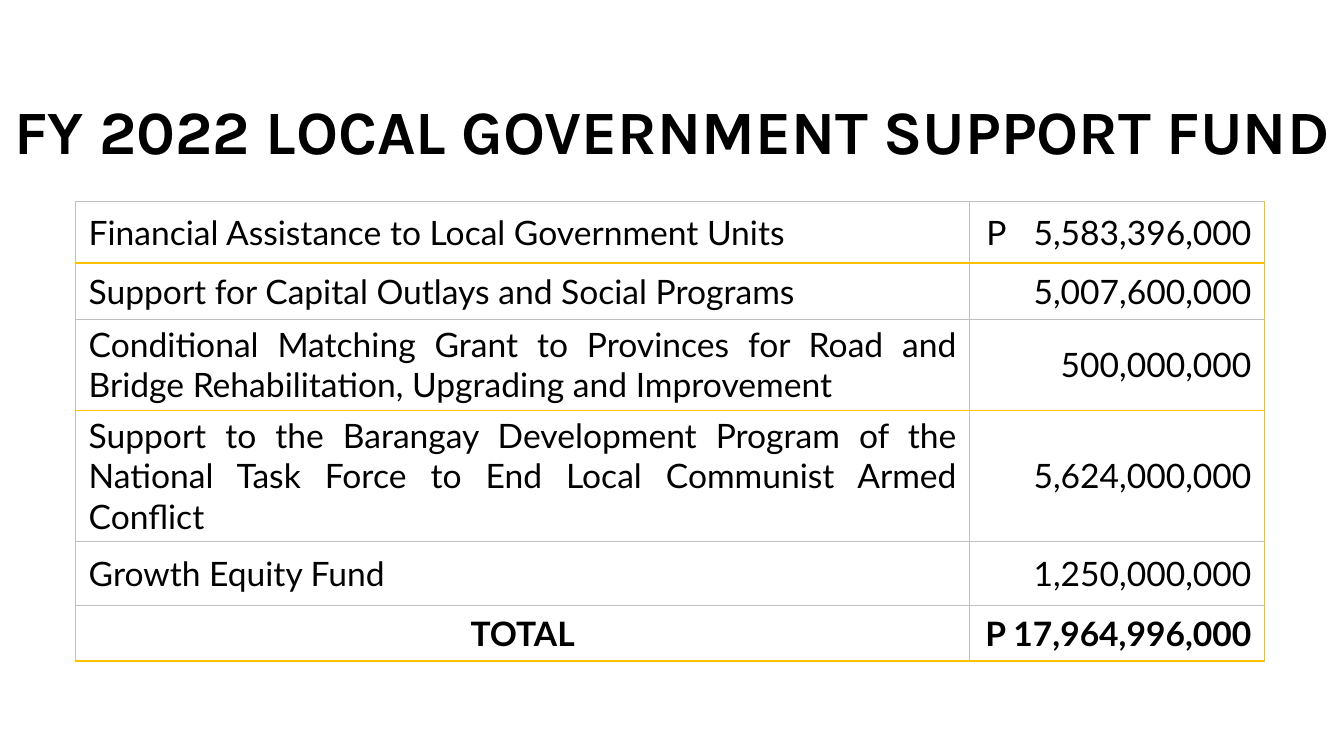
from lxml.etree import SubElement
from pptx import Presentation
from pptx.dml.color import RGBColor
from pptx.enum.text import MSO_ANCHOR, MSO_AUTO_SIZE, PP_ALIGN
from pptx.oxml.ns import qn
from pptx.util import Pt

BLACK = RGBColor(0x00, 0x00, 0x00)
WHITE = RGBColor(0xFF, 0xFF, 0xFF)
GOLD = RGBColor(0xFF, 0xC0, 0x00)
GREY = RGBColor(0xBF, 0xBF, 0xBF)

TITLE_FONT = {"name": "Karla", "size": Pt(44), "bold": True}
BODY_FONT = {"name": "Lato", "size": Pt(24), "bold": False}
TOTAL_FONT = {**BODY_FONT, "bold": True}
CELL_FORMAT = {
    "margin_left": Pt(9.4), "margin_right": Pt(9.4),
    "margin_top": Pt(3.6), "margin_bottom": Pt(3.6),
    "vertical_anchor": MSO_ANCHOR.MIDDLE,
}
TABBED_FORMAT = {**CELL_FORMAT, "margin_left": Pt(12), "margin_right": Pt(4)}

COLUMN_WIDTHS = (638.6, 210.6)
ROW_HEIGHTS = (44, 40, 65, 94, 45.5, 39.5)
ROW_RULES = ((GREY, 1), (GOLD, 2), (GREY, 1), (GOLD, 1), (GREY, 1), (GREY, 1), (GOLD, 2))
COLUMN_RULES = ((GREY, 1), (GREY, 1), (GOLD, 1))
FUNDS = (
    ("Financial Assistance to Local Government Units", "P\t5,583,396,000"),
    ("Support for Capital Outlays and Social Programs", "5,007,600,000"),
    ("Conditional Matching Grant to Provinces for Road and Bridge "
     "Rehabilitation, Upgrading and Improvement", "500,000,000"),
    ("Support to the Barangay Development Program of the National Task Force "
     "to End Local Communist Armed Conflict", "5,624,000,000"),
    ("Growth Equity Fund", "1,250,000,000"),
    ("TOTAL", "P 17,964,996,000"),
)


def apply_format(target, values):
    """Set every attribute in values on the target."""
    for name, value in values.items():
        setattr(target, name, value)


def set_font(para, values):
    """Give a paragraph's spans their font in black."""
    for span in para.runs:
        apply_format(span.font, values)
        span.font.color.rgb = BLACK


def add_title(page, left, top, width, height):
    """Place the slide title in its box."""
    title = page.shapes.title
    apply_format(title, {"left": Pt(left), "top": Pt(top),
                         "width": Pt(width), "height": Pt(height)})
    apply_format(title.text_frame, {"text": "FY 2022 LOCAL GOVERNMENT SUPPORT FUND",
                                    "vertical_anchor": MSO_ANCHOR.MIDDLE,
                                    "word_wrap": True,
                                    "auto_size": MSO_AUTO_SIZE.NONE})
    para = title.text_frame.paragraphs[0]
    para.alignment = PP_ALIGN.CENTER
    set_font(para, TITLE_FONT)


def add_borders(cell, row, column):
    """Draw the grid rules around one cell."""
    rules = {"a:lnL": COLUMN_RULES[column], "a:lnR": COLUMN_RULES[column + 1],
             "a:lnT": ROW_RULES[row], "a:lnB": ROW_RULES[row + 1]}
    properties = cell._tc.get_or_add_tcPr()
    for tag, (color, weight) in rules.items():
        line = SubElement(properties, qn(tag), w=str(Pt(weight)))
        fill = SubElement(line, qn("a:solidFill"))
        SubElement(fill, qn("a:srgbClr"), val=str(color))


def add_right_tab(para, position):
    """Add a right-aligned tab stop to a paragraph."""
    stops = SubElement(para._p.get_or_add_pPr(), qn("a:tabLst"))
    SubElement(stops, qn("a:tab"), pos=str(Pt(position)), algn="r")


def fill_cell(cell, text, alignment, font):
    """Write one cell, with a tab stop where the text has a tab."""
    tabbed = "\t" in text
    apply_format(cell, TABBED_FORMAT if tabbed else CELL_FORMAT)
    cell.fill.solid()
    cell.fill.fore_color.rgb = WHITE
    cell.text = text
    para = cell.text_frame.paragraphs[0]
    para.alignment = PP_ALIGN.LEFT if tabbed else alignment
    if tabbed:
        add_right_tab(para, COLUMN_WIDTHS[1] - 9.4 - 12)
    set_font(para, font)


def add_fund_table(page, left, top):
    """Build the table of funds and their total."""
    frame = page.shapes.add_table(len(FUNDS), len(COLUMN_WIDTHS), Pt(left), Pt(top),
                                  Pt(sum(COLUMN_WIDTHS)), Pt(sum(ROW_HEIGHTS)))
    table = frame.table
    apply_format(table, {"first_row": False, "horz_banding": False})
    for column, width in zip(table.columns, COLUMN_WIDTHS):
        column.width = Pt(width)
    for row, height in zip(table.rows, ROW_HEIGHTS):
        row.height = Pt(height)
    for row, fund in enumerate(FUNDS):
        is_total = row == len(FUNDS) - 1
        label_alignment = PP_ALIGN.CENTER if is_total else PP_ALIGN.JUSTIFY
        font = TOTAL_FONT if is_total else BODY_FONT
        for column, alignment in enumerate((label_alignment, PP_ALIGN.RIGHT)):
            cell = table.cell(row, column)
            add_borders(cell, row, column)
            fill_cell(cell, fund[column], alignment, font)


def main():
    """Build and save the deck."""
    deck = Presentation()
    apply_format(deck, {"slide_width": Pt(960), "slide_height": Pt(540)})
    page = deck.slides.add_slide(deck.slide_layouts[5])
    add_title(page, -33, 66, 1027, 54)
    add_fund_table(page, 54, 144)
    deck.save("out.pptx")


if __name__ == "__main__":
    main()
